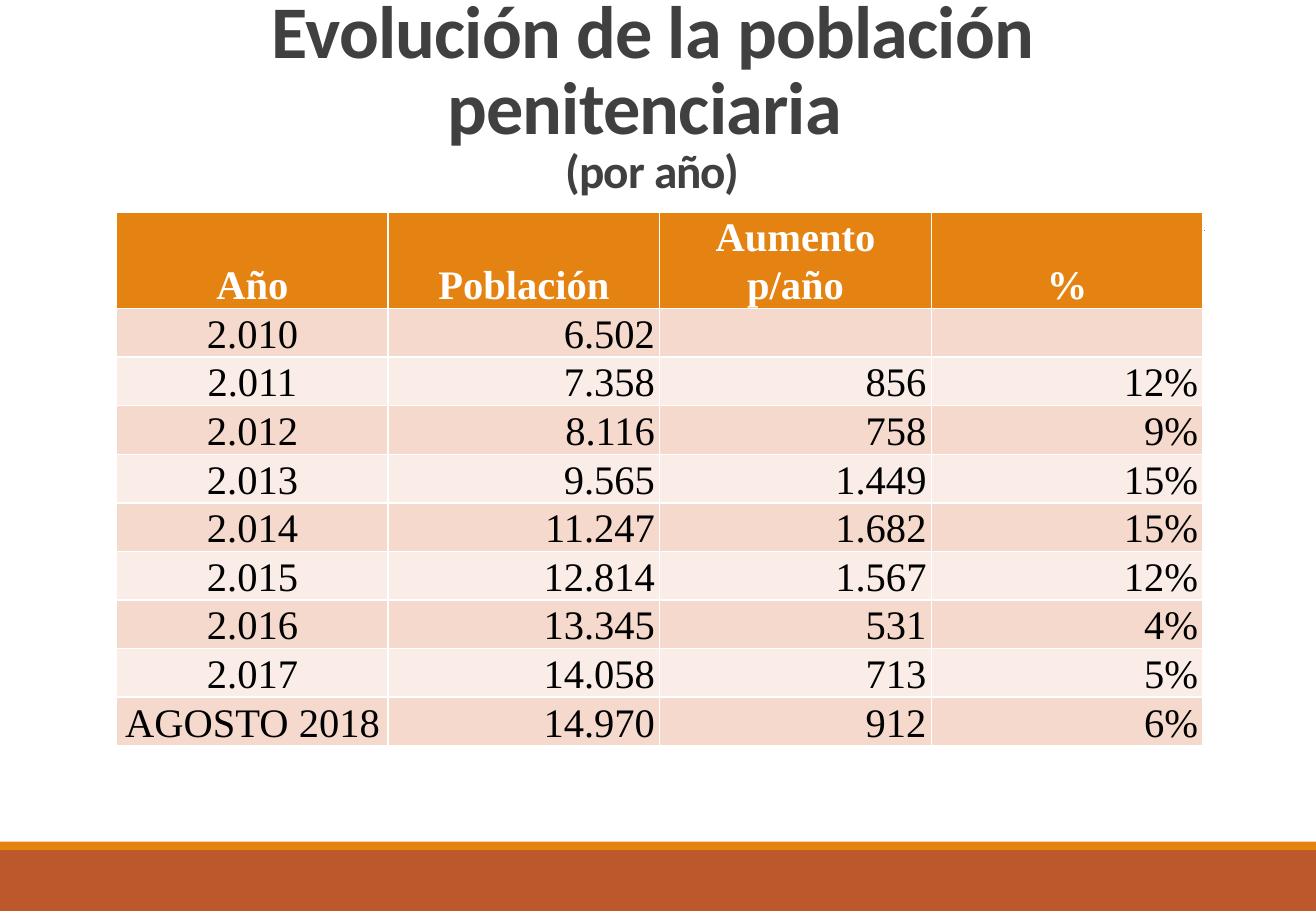
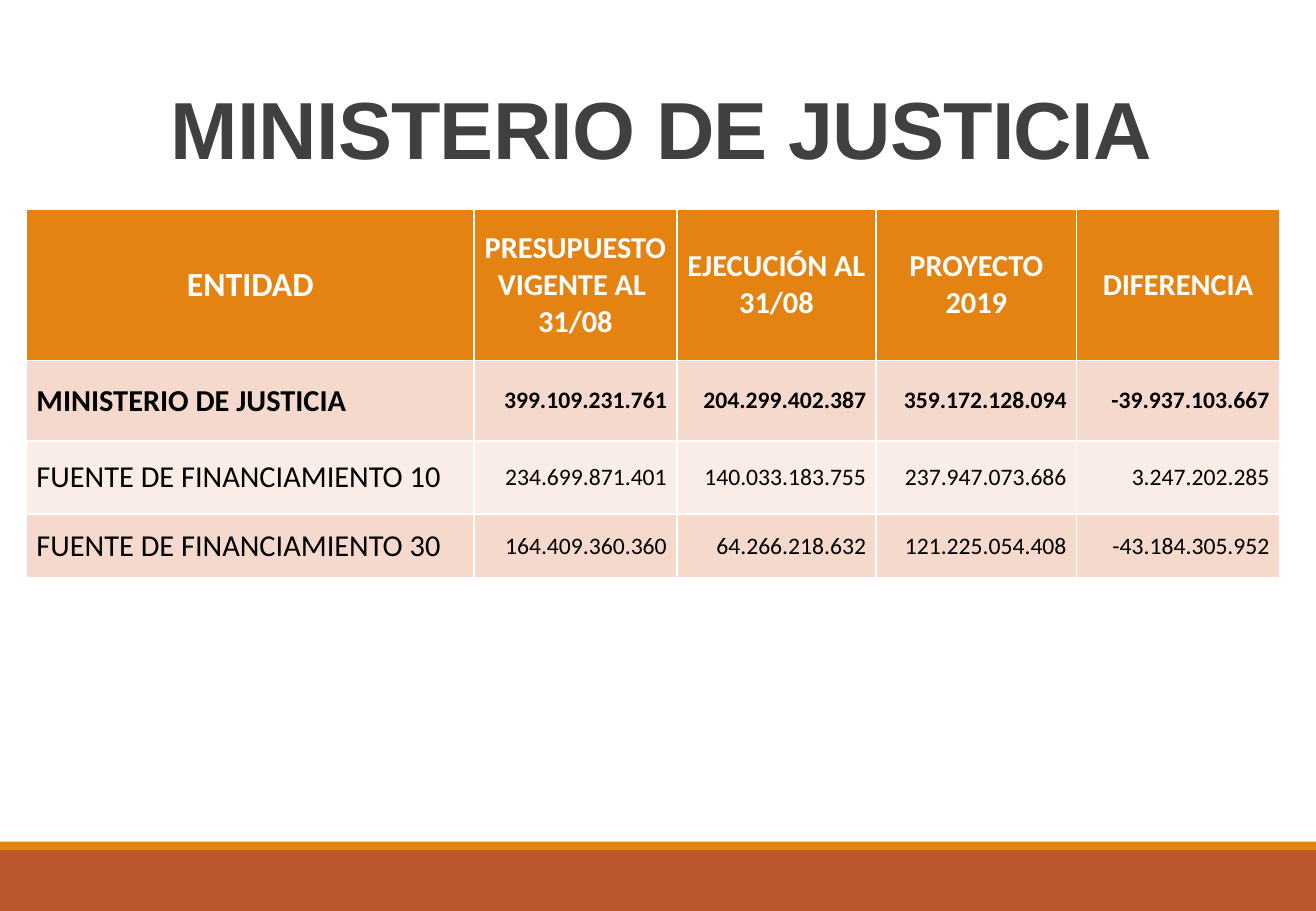
from pptx import Presentation
from pptx.dml.color import RGBColor
from pptx.enum import shapes, text
from pptx.util import Inches, Pt

ORANGE = RGBColor(0xE4, 0x83, 0x12)
RUST = RGBColor(0xBD, 0x58, 0x2C)
GREY = RGBColor(0x80, 0x80, 0x80)
TITLE_GREY = RGBColor(0x40, 0x40, 0x40)
WHITE = RGBColor(0xFF, 0xFF, 0xFF)
BLACK = RGBColor(0, 0, 0)
ROW_FILLS = (RGBColor(0xF5, 0xD9, 0xCC), RGBColor(0xFA, 0xED, 0xE7))

WIDTH, HEIGHT = 10.83, 7.5
BANDS = ((7, 0.5, RUST), (6.93, 0.07, ORANGE))  # top, height, colour

LEFT, CENTER, RIGHT = (text.PP_ALIGN.LEFT, text.PP_ALIGN.CENTER,
                       text.PP_ALIGN.RIGHT)
MIDDLE, BOTTOM = text.MSO_ANCHOR.MIDDLE, text.MSO_ANCHOR.BOTTOM

POPULATION = (
    ("Año", "Población", "Aumento p/año", "%"),
    ("2.010", "6.502", "", ""),
    ("2.011", "7.358", "856", "12%"),
    ("2.012", "8.116", "758", "9%"),
    ("2.013", "9.565", "1.449", "15%"),
    ("2.014", "11.247", "1.682", "15%"),
    ("2.015", "12.814", "1.567", "12%"),
    ("2.016", "13.345", "531", "4%"),
    ("2.017", "14.058", "713", "5%"),
    ("AGOSTO 2018", "14.970", "912", "6%"),
)
BUDGET = (
    ("ENTIDAD", "PRESUPUESTO VIGENTE AL \n31/08", "EJECUCIÓN AL 31/08",
     "PROYECTO 2019", "DIFERENCIA"),
    ("MINISTERIO DE JUSTICIA", "399.109.231.761", "204.299.402.387",
     "359.172.128.094", "-39.937.103.667"),
    ("FUENTE DE FINANCIAMIENTO 10", "234.699.871.401", "140.033.183.755",
     "237.947.073.686", "3.247.202.285"),
    ("FUENTE DE FINANCIAMIENTO 30", "164.409.360.360", "64.266.218.632",
     "121.225.054.408", "-43.184.305.952"),
)


def format_font(font, name, size, color, bold):
    font.name = name
    font.size = Pt(size)
    font.color.rgb = color
    font.bold = bold


def move_to_layout(shape, layout, position):
    """Put a shape behind the layout's placeholders, so all slides share it."""
    properties = shape.element.xpath(".//p:cNvPr")[0]
    properties.set("id", str(100 + position))
    layout.shapes.element.insert(2 + position, shape.element)


def decorate_layout(layout, slide):
    """Draw the footer bands and title rule on the slide, then share them."""
    decorations = []
    for top, height, color in BANDS:
        band = slide.shapes.add_shape(
            shapes.MSO_SHAPE.RECTANGLE, 0, Inches(top), Inches(WIDTH),
            Inches(height))
        band.shadow.inherit = False
        band.fill.solid()
        band.fill.fore_color.rgb = color
        band.line.fill.background()
        decorations.append(band)
    rule = slide.shapes.add_connector(
        shapes.MSO_CONNECTOR.STRAIGHT, Inches(1.06), Inches(1.9),
        Inches(9.92), Inches(1.9))
    rule.line.color.rgb = GREY
    rule.line.width = Pt(0.5)
    properties = rule.element.spPr
    properties.append(properties.makeelement(
        "{http://schemas.openxmlformats.org/drawingml/2006/main}effectLst"))
    decorations.append(rule)
    for position, shape in enumerate(decorations):
        move_to_layout(shape, layout, position)


def set_title(slide, box, wording, font, sizes, anchor):
    """Fill the title; sizes holds one size for each of its runs."""
    title = slide.shapes.title
    title.left, title.top, title.width, title.height = map(Inches, box)
    frame = title.text_frame
    frame.text = wording
    frame.word_wrap = True
    frame.auto_size = text.MSO_AUTO_SIZE.NONE
    frame.vertical_anchor = anchor
    paragraph = frame.paragraphs[0]
    paragraph.alignment = CENTER
    paragraph.line_spacing = 0.85
    for run, size in zip(paragraph.runs, sizes):
        format_font(run.font, font, size, TITLE_GREY, True)
        run.font._element.set("spc", "-50")


def add_data_table(slide, left, top, widths, heights, rows, font, size_of,
                   first_alignment, anchor, margins, bold_rows=(0,),
                   line_spacing=None):
    """Add a table with an orange header; size_of(row, column) gives points."""
    table = slide.shapes.add_table(
        len(rows), len(widths), Inches(left), Inches(top),
        Inches(sum(widths)), Inches(sum(heights))).table
    for column, width in zip(table.columns, widths):
        column.width = Inches(width)
    for row, height in zip(table.rows, heights):
        row.height = Inches(height)
    for i, values in enumerate(rows):
        for j, value in enumerate(values):
            cell = table.cell(i, j)
            cell.fill.solid()
            cell.fill.fore_color.rgb = ROW_FILLS[(i - 1) % 2] if i else ORANGE
            cell.vertical_anchor = anchor
            cell.margin_left = cell.margin_right = Inches(margins[0])
            cell.margin_top = cell.margin_bottom = Inches(margins[1])
            cell.text_frame.text = value
            for paragraph in cell.text_frame.paragraphs:
                if i == 0:
                    paragraph.alignment = CENTER
                else:
                    paragraph.alignment = RIGHT if j else first_alignment
                paragraph.line_spacing = line_spacing
                for run in paragraph.runs:
                    format_font(run.font, font, size_of(i, j),
                                BLACK if i else WHITE, i in bold_rows)


def budget_size(row, column):
    if row == 0:
        return 18 if column else 20
    return 14 if column else 18


def build_population_slide(slide):
    set_title(slide, (0.58, 0.31, 9.58, 1.37),
              "Evolución de la población penitenciaria \v(por año)",
              "Calibri", (44, 28), BOTTOM)
    add_data_table(slide, 0.96, 1.75, [8.94 / 4] * 4, [0.79] + [0.4] * 9,
                   POPULATION, "Times New Roman", lambda row, column: 24,
                   CENTER, BOTTOM, (0.04, 0), line_spacing=1.07)


def build_budget_slide(slide):
    set_title(slide, (0.97, 0.31, 8.94, 1.59), "MINISTERIO DE JUSTICIA",
              "Arial", (48,), MIDDLE)
    add_data_table(slide, 0.22, 1.72, (3.68, 1.67, 1.64, 1.65, 1.67),
                   (1.25, 0.66, 0.6, 0.53), BUDGET, "Calibri", budget_size,
                   LEFT, MIDDLE, (0.08, 0.05), bold_rows=(0, 1))


def main():
    presentation = Presentation()
    presentation.slide_width = Inches(WIDTH)
    presentation.slide_height = Inches(HEIGHT)
    layout = presentation.slide_layouts.get_by_name("Title Only")
    population_slide = presentation.slides.add_slide(layout)
    decorate_layout(layout, population_slide)
    build_population_slide(population_slide)
    build_budget_slide(presentation.slides.add_slide(layout))
    presentation.save("out.pptx")


if __name__ == "__main__":
    main()
